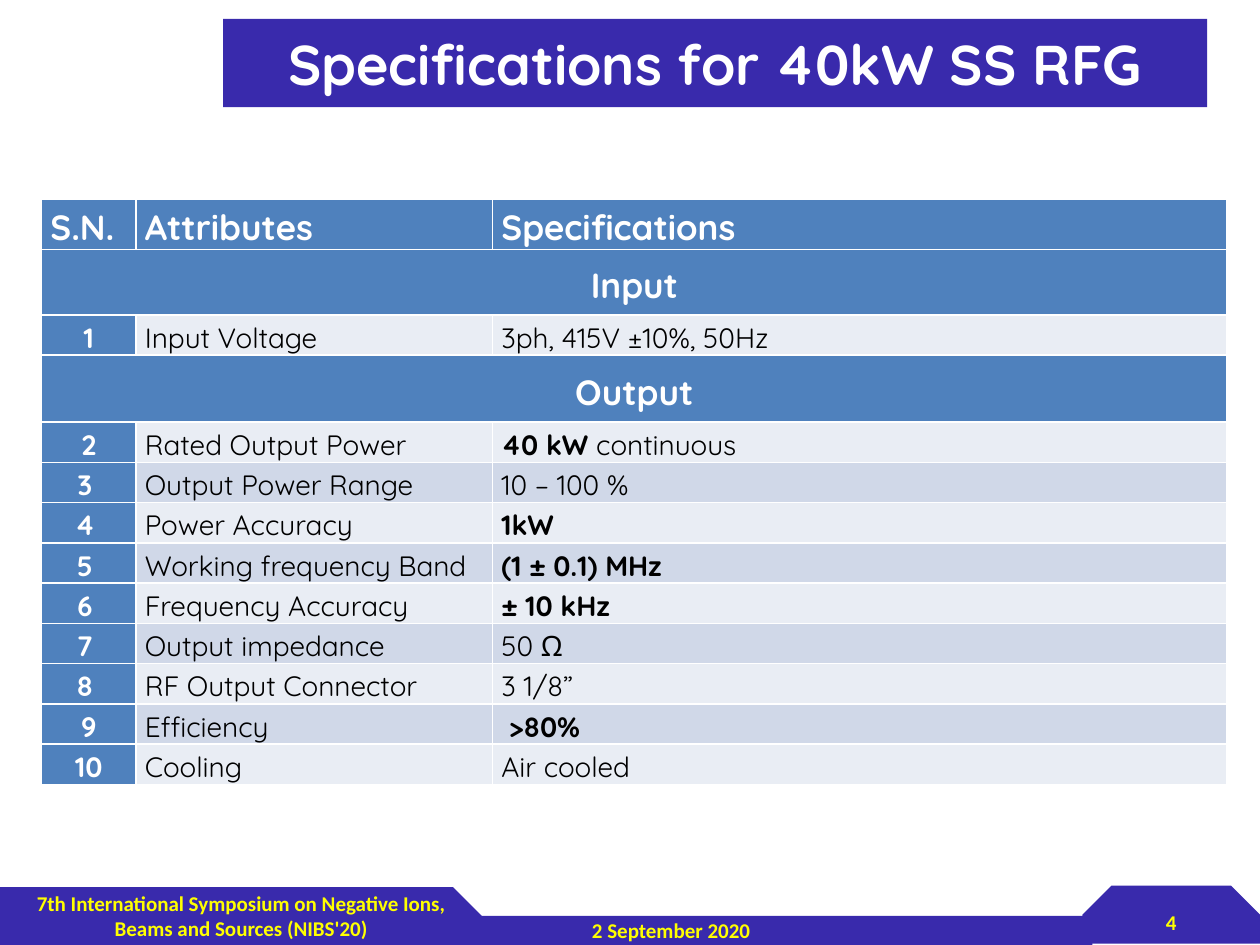
from pptx import Presentation
from pptx.dml.color import RGBColor
from pptx.enum.shapes import MSO_SHAPE
from pptx.enum.text import MSO_ANCHOR, PP_ALIGN
from pptx.util import Inches, Pt

MIDDLE = MSO_ANCHOR.MIDDLE
LEFT, CENTER, JUSTIFY = PP_ALIGN.LEFT, PP_ALIGN.CENTER, PP_ALIGN.JUSTIFY
COLORS = {
    "indigo": "392AAC", "blue": "4F81BD", "pale": "E9EDF4", "mist": "D0D8E8",
    "white": "FFFFFF", "black": "000000", "yellow": "FFFF00",
}


def paint(item, color):
    item.fill.solid()
    item.fill.fore_color.rgb = RGBColor.from_string(COLORS[color])


def write(frame, runs, size, color, align, font="Quicksand"):
    """Fill the first paragraph with (text, bold) runs."""
    frame.word_wrap = True
    frame.vertical_anchor = MIDDLE
    para = frame.paragraphs[0]
    para.alignment = align
    for text, bold in runs:
        run = para.add_run()
        run.text = text
        run.font.name = font
        run.font.size = Pt(size)
        run.font.bold = bold
        run.font.color.rgb = RGBColor.from_string(COLORS[color])
    return para


deck = Presentation()
deck.slide_width, deck.slide_height = Inches(10), Inches(7.5)
slide = deck.slides.add_slide(deck.slide_layouts[5])
shapes = slide.shapes

# Title
title = shapes.title
title.left, title.top = Inches(1.77), Inches(0.15)
title.width, title.height = Inches(7.81), Inches(0.7)
paint(title, "indigo")
write(title.text_frame, [("Specifications for 40kW SS RFG", True)], 32, "white", CENTER)

# Footer bands
bands = [
    (MSO_SHAPE.RECTANGLE, 3.67, 7.27, 5, 0.23, []),
    (MSO_SHAPE.SNIP_1_RECTANGLE, 0, 7.04, 3.83, 0.47, [0.5]),
    (MSO_SHAPE.SNIP_2_SAME_RECTANGLE, 8.59, 7.03, 1.41, 0.46, [0.5, 0]),
]
for kind, left, top, width, height, cuts in bands:
    band = shapes.add_shape(kind, Inches(left), Inches(top), Inches(width), Inches(height))
    band.shadow.inherit = False
    paint(band, "indigo")
    band.line.fill.background()
    for i, cut in enumerate(cuts):
        band.adjustments[i] = cut
write(band.text_frame, [("4", True)], 12, "yellow", CENTER, "Calibri")

# Footer texts
notes = [
    ("2 September 2020", 4.6, 7.26, 2.03, 0.24, LEFT),
    ("7th International Symposium on Negative Ions, Beams and Sources (NIBS'20)",
     0, 7.03, 3.83, 0.47, CENTER),
]
for text, left, top, width, height, align in notes:
    box = shapes.add_textbox(Inches(left), Inches(top), Inches(width), Inches(height))
    write(box.text_frame, [(text, True)], 12, "yellow", align, "Calibri")

# Specification table: one entry is a section, three are a full row
rows = [
    ("S.N.", "Attributes", [("Specifications", True)]),
    ("Input",),
    ("1", "Input Voltage", [("3ph, 415V ±10%, 50Hz", False)]),
    ("Output",),
    ("2", "Rated Output Power", [("40 kW ", True), ("continuous", False)]),
    ("3 ", "Output Power Range", [("10 – 100 %", False)]),
    ("4 ", "Power Accuracy", [("1kW ", True)]),
    ("5 ", "Working frequency Band", [("(1 ± 0.1) MHz ", True)]),
    ("6 ", "Frequency Accuracy", [("± 10 kHz", True)]),
    ("7 ", "Output impedance", [("50 Ω", False)]),
    ("8 ", "RF Output Connector", [("3 1/8”", False)]),
    ("9", "Efficiency", [(" ", False), (">80%", True)]),
    ("10", "Cooling", [("Air cooled", False)]),
]
tall = {0: 0.4, 1: 0.52, 3: 0.53}
heights = [tall.get(i, 0.32) for i in range(len(rows))]
widths = [0.75, 2.83, 5.83]
table = shapes.add_table(len(rows), len(widths), Inches(0.33), Inches(1.58),
                         Inches(sum(widths)), Inches(sum(heights))).table
table.first_col = True
for col, width in zip(table.columns, widths):
    col.width = Inches(width)

for r, row in enumerate(rows):
    table.rows[r].height = Inches(heights[r])
    head, section = r == 0, len(row) == 1
    if section:
        table.cell(r, 0).merge(table.cell(r, 2))
    for c, entry in enumerate(row):
        cell = table.cell(r, c)
        cell.margin_left = cell.margin_right = Inches(0.07)
        cell.margin_top = cell.margin_bottom = 0
        cell.vertical_anchor = MIDDLE
        strong = head or c == 0
        paint(cell, "blue" if strong else "mist" if r % 2 else "pale")
        runs = [(entry, strong)] if isinstance(entry, str) else entry
        para = write(cell.text_frame, runs, 20 if head or section else 16,
                     "white" if strong else "black",
                     CENTER if c == 0 and not head else JUSTIFY)
        para.line_spacing = 1.15

deck.save("out.pptx")
